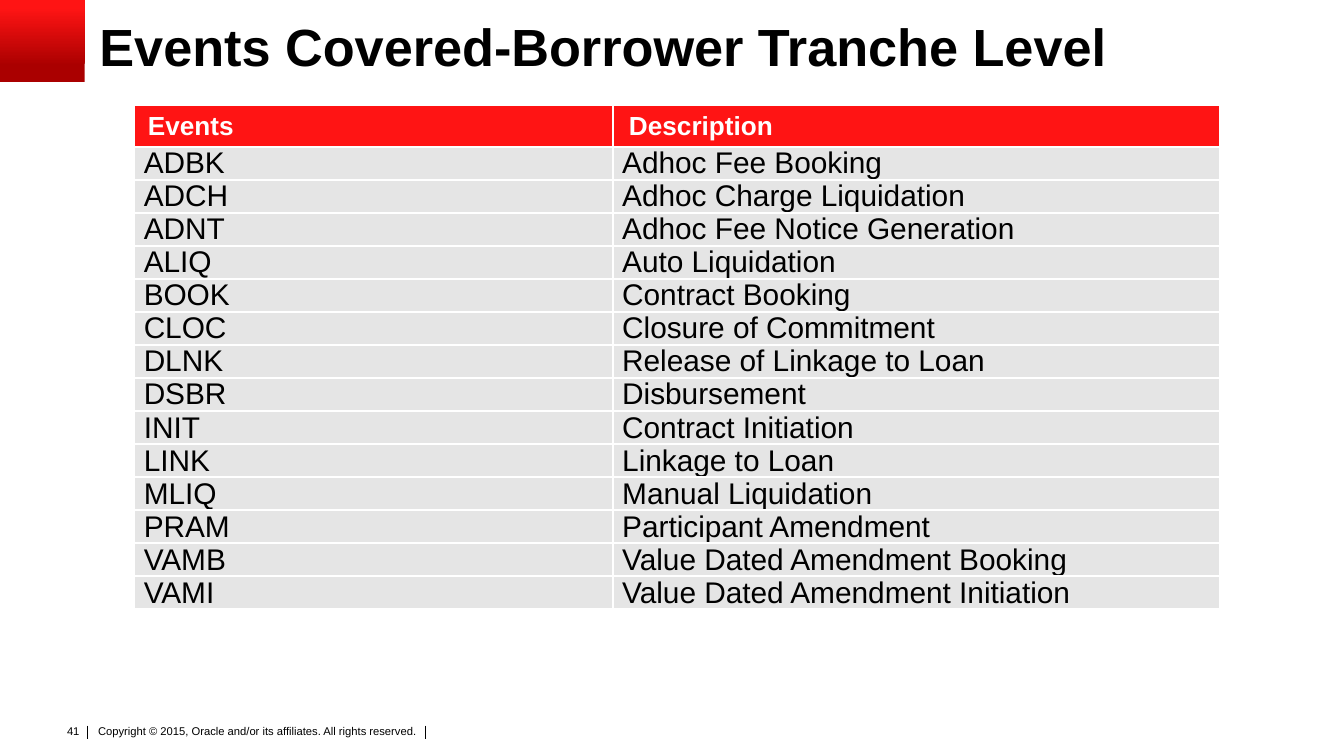
from dataclasses import dataclass

from lxml import etree
from pptx import Presentation
from pptx import util as u
from pptx.dml.color import RGBColor
from pptx.enum import shapes, text
from pptx.oxml.ns import qn

WIDE = u.Inches(10)
HIGH = WIDE * 9 // 16
FONT = "Arial"
BLACK, WHITE, RED, DARK, GREY = "000000", "FFFFFF", "FF1414", "AA0000", "E5E5E5"


@dataclass
class Box:
    """Place and size in hundredths of the slide's width and height."""
    x: float
    y: float
    w: float
    h: float

    def emu(self) -> tuple:
        return across(self.x), down(self.y), across(self.w), down(self.h)


@dataclass
class Style:
    """Look of one kind of table cell; pads are in inches."""
    fill: str
    ink: str
    size: float
    bold: bool
    side: float
    edge: float
    lead: float
    rules: str
    anchor: text.MSO_ANCHOR


@dataclass
class Event:
    code: str
    label: str


HEAD = Style(RED, WHITE, 14, True, 0.1, 0.04, 1.0, "B", text.MSO_ANCHOR.MIDDLE)
BODY = Style(GREY, BLACK, 16, False, 0.07, 0, 0.92, "TB", text.MSO_ANCHOR.BOTTOM)

EVENTS = [
    Event("ADBK", "Adhoc Fee Booking"),
    Event("ADCH", "Adhoc Charge Liquidation"),
    Event("ADNT", "Adhoc Fee Notice Generation"),
    Event("ALIQ", "Auto Liquidation"),
    Event("BOOK", "Contract Booking"),
    Event("CLOC", "Closure of Commitment"),
    Event("DLNK", "Release of Linkage to Loan"),
    Event("DSBR", "Disbursement"),
    Event("INIT", "Contract Initiation"),
    Event("LINK", "Linkage to Loan"),
    Event("MLIQ", "Manual Liquidation"),
    Event("PRAM", "Participant Amendment"),
    Event("VAMB", "Value Dated Amendment Booking"),
    Event("VAMI", "Value Dated Amendment Initiation"),
]


def across(share: float) -> int:
    return round(WIDE * share / 100)


def down(share: float) -> int:
    return round(HIGH * share / 100)


def hue(code: str) -> RGBColor:
    return RGBColor.from_string(code)


def add_run(para, words: str, size: float, ink: str = BLACK, bold: bool = False) -> None:
    run = para.add_run()
    run.text = words
    run.font.name = FONT
    run.font.size = u.Pt(size)
    run.font.bold = bold
    run.font.color.rgb = hue(ink)


def set_pads(item, side: float, edge: float) -> None:
    item.margin_left = item.margin_right = u.Inches(side)
    item.margin_top = item.margin_bottom = u.Inches(edge)


def add_title(slide, box: Box, words: str) -> None:
    title = slide.shapes.title
    title.left, title.top, title.width, title.height = box.emu()
    frame = title.text_frame
    set_pads(frame, 0, 0)
    frame.auto_size = text.MSO_AUTO_SIZE.NONE
    frame.vertical_anchor = text.MSO_ANCHOR.MIDDLE
    para = frame.paragraphs[0]
    para.alignment = text.PP_ALIGN.LEFT
    para.line_spacing = 0.9
    add_run(para, words, 28, bold=True)


def add_block(slide, box: Box) -> None:
    block = slide.shapes.add_shape(shapes.MSO_SHAPE.RECTANGLE, *box.emu())
    block.shadow.inherit = False
    block.line.fill.background()
    block.fill.gradient()
    block.fill.gradient_angle = 90
    for stop, (spot, code) in zip(block.fill.gradient_stops, [(0.2, DARK), (0.9, RED)]):
        stop.position = spot
        stop.color.rgb = hue(code)


def add_note(slide, box: Box, words: str, side: float, edge: float,
             align: text.PP_ALIGN, wrap: bool) -> None:
    frame = slide.shapes.add_textbox(*box.emu()).text_frame
    frame.word_wrap = wrap
    set_pads(frame, side, edge)
    para = frame.paragraphs[0]
    para.alignment = align
    add_run(para, words, 6)


def add_mark(slide, x: float, top: float, end: float) -> None:
    mark = slide.shapes.add_connector(
        shapes.MSO_CONNECTOR.STRAIGHT, across(x), down(top), across(x), down(end))
    mark.line.color.rgb = hue(BLACK)
    mark.line.width = u.Pt(0.5)
    etree.SubElement(mark._element.spPr, qn("a:effectLst"))


def add_rules(cell, sides: str) -> None:
    """White rules on the given sides, placed ahead of the cell's fill."""
    props = cell._tc.get_or_add_tcPr()
    for spot, side in enumerate(sides):
        rule = etree.Element(qn(f"a:ln{side}"), w=str(u.Pt(1.5)))
        solid = etree.SubElement(rule, qn("a:solidFill"))
        etree.SubElement(solid, qn("a:srgbClr"), val=WHITE)
        props.insert(spot, rule)


def fill_cell(cell, words: str, style: Style, inner: str) -> None:
    cell.fill.solid()
    cell.fill.fore_color.rgb = hue(style.fill)
    cell.vertical_anchor = style.anchor
    set_pads(cell, style.side, style.edge)
    para = cell.text_frame.paragraphs[0]
    para.line_spacing = style.lead
    add_run(para, words, style.size, style.ink, style.bold)
    add_rules(cell, inner + style.rules)


def add_grid(slide, box: Box, split: float, head: float, step: float) -> None:
    rows = [Event("Events", "Description")] + EVENTS
    grid = slide.shapes.add_table(len(rows), 2, *box.emu()).table
    grid.horz_banding = False
    grid.columns[0].width = across(split)
    grid.columns[1].width = across(box.w - split)
    for i, event in enumerate(rows):
        grid.rows[i].height = down(step if i else head)
        for j, words in enumerate((event.code, event.label)):
            fill_cell(grid.cell(i, j), words, BODY if i else HEAD, "RL"[j])
    # Slight indent of the second heading
    grid.cell(0, 1).margin_left = u.Inches(0.12)


def main() -> None:
    deck = Presentation()
    deck.slide_width, deck.slide_height = WIDE, HIGH
    slide = deck.slides.add_slide(deck.slide_layouts[5])

    # Footer
    add_note(slide, Box(6.9, 95.5, 27.4, 4.27),
             "Copyright © 2015, Oracle and/or its affiliates. All rights reserved.",
             0.04, 0.02, text.PP_ALIGN.LEFT, True)
    for x in (6.5, 31.65):
        add_mark(slide, x, 96, 97.8)
    add_note(slide, Box(3.9, 94.95, 3, 3.56), "41", 0.1, 0.05, text.PP_ALIGN.RIGHT, False)

    # Heading
    add_block(slide, Box(0, 0, 6.3, 10.85))
    add_title(slide, Box(7.4, 2.67, 90, 7.82), "Events Covered-Borrower Tranche Level")

    # Event table
    add_grid(slide, Box(10, 13.87, 80.8, 65.3), 35.6, 5.51, 4.27)

    deck.save("out.pptx")


if __name__ == "__main__":
    main()
